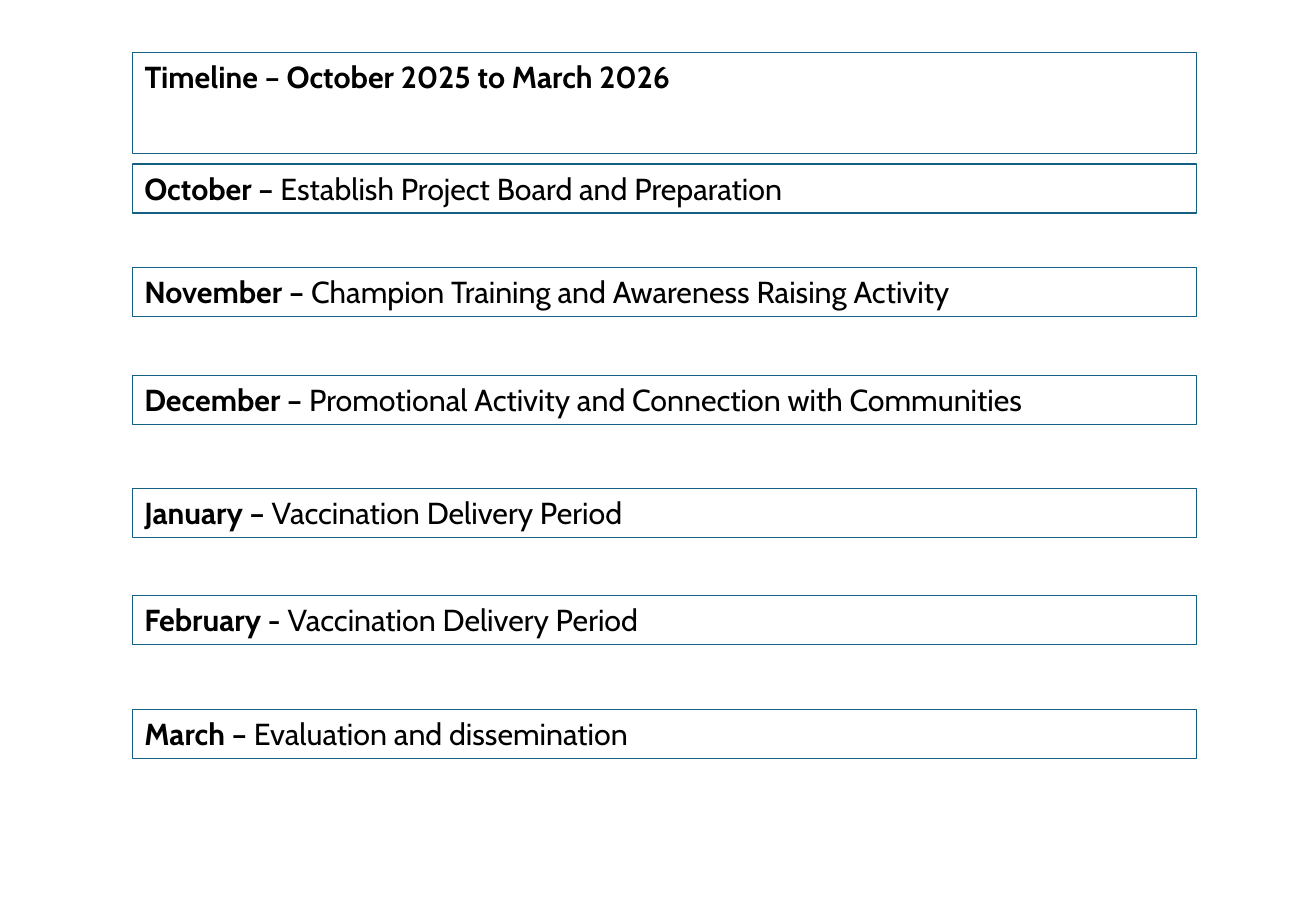
from pptx import Presentation
from pptx.dml.color import RGBColor
from pptx.enum.text import MSO_ANCHOR, MSO_AUTO_SIZE, PP_ALIGN
from pptx.util import Pt

LEFT, WIDTH, HEIGHT = 78.5, 630.7, 29.1
TITLE = "Timeline – October 2025 to March 2026"
STEPS = [
    (97.2, "October – ", "Establish Project Board and Preparation"),
    (158.4, "November – ", "Champion Training and Awareness Raising Activity"),
    (222.5, "December – ", "Promotional Activity and Connection with Communities"),
    (289.4, "January – ", "Vaccination Delivery Period"),
    (352.8, "February - ", "Vaccination Delivery Period"),
    (420.5, "March – ", "Evaluation and dissemination"),
]


def color(code):
    return RGBColor.from_string(code)


def write(para, text, bold=False, size=18, font="Cabin", ink="000000"):
    run = para.add_run()
    run.text = text
    run.font.name = font
    run.font.size = Pt(size)
    run.font.bold = bold
    run.font.color.rgb = color(ink)


def frame(shape):
    """Outline a text shape and return its paragraph, ready for runs."""
    shape.line.color.rgb = color("156082")
    shape.line.width = Pt(0.75)
    body = shape.text_frame
    body.word_wrap = True
    body.auto_size = MSO_AUTO_SIZE.SHAPE_TO_FIT_TEXT
    body.vertical_anchor = MSO_ANCHOR.TOP
    para = body.paragraphs[0]
    para.alignment = PP_ALIGN.LEFT
    para.line_spacing = 1.0
    para.space_before = Pt(0)
    return para


def heading(slide, left, top, width, height):
    title = slide.shapes.title
    title.left, title.top = Pt(left), Pt(top)
    title.width, title.height = Pt(width), Pt(height)
    write(frame(title), TITLE, bold=True)


def step(slide, left, top, width, height, month, task):
    box = slide.shapes.add_textbox(Pt(left), Pt(top), Pt(width), Pt(height))
    para = frame(box)
    write(para, month, bold=True)
    write(para, task)


def main():
    deck = Presentation()
    deck.slide_width, deck.slide_height = Pt(780), Pt(540)
    slide = deck.slides.add_slide(deck.slide_layouts.get_by_name("Title Only"))

    # Title bar
    heading(slide, LEFT, 31, WIDTH, HEIGHT)

    # One bar per month
    for top, month, task in STEPS:
        step(slide, LEFT, top, WIDTH, HEIGHT, month, task)

    deck.save("out.pptx")


if __name__ == "__main__":
    main()
